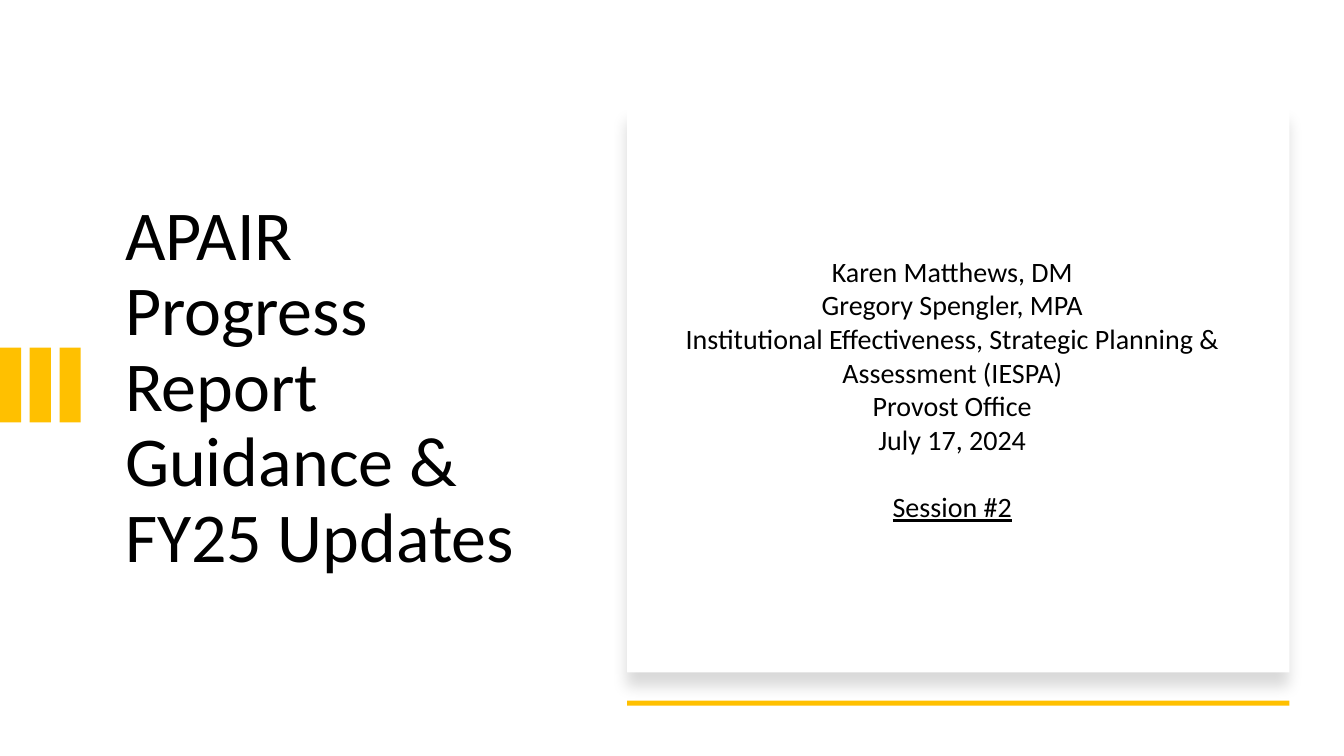
from dataclasses import dataclass

from lxml import etree
from pptx import Presentation
from pptx.dml.color import RGBColor
from pptx.enum.shapes import MSO_SHAPE
from pptx.enum.text import MSO_ANCHOR, PP_ALIGN
from pptx.oxml.ns import qn
from pptx.util import Inches, Pt

RECT = MSO_SHAPE.RECTANGLE
MIDDLE = MSO_ANCHOR.MIDDLE
LEFT, CENTER = PP_ALIGN.LEFT, PP_ALIGN.CENTER
TITLE_ONLY = 5


@dataclass(frozen=True)
class Theme:
    font: str = "Calibri"
    ink: str = "000000"
    paper: str = "FFFFFF"
    gold: str = "FFC000"
    title: int = 50
    body: int = 20


THEME = Theme()
TITLE = "APAIR Progress Report Guidance & FY25 Updates"
CREDITS = [
    "Karen Matthews, DM",
    "Gregory Spengler, MPA",
    "Institutional Effectiveness, Strategic Planning & Assessment (IESPA)",
    "Provost Office",
    "July 17, 2024",
]
SESSION = "Session #2"


def place(shape, left, top, width, height):
    shape.left, shape.top = Inches(left), Inches(top)
    shape.width, shape.height = Inches(width), Inches(height)


def frame_of(shape):
    frame = shape.text_frame
    frame.word_wrap = True
    frame.vertical_anchor = MIDDLE
    return frame


def write(para, text, size, align=LEFT, spacing=1.0, before=0, underline=False):
    para.alignment = align
    para.line_spacing = spacing
    para.space_before = Pt(before)
    run = para.add_run()
    run.text = text
    font = run.font
    font.name, font.size = THEME.font, Pt(size)
    font.color.rgb = RGBColor.from_string(THEME.ink)
    font.underline = underline


def add_rect(shapes, left, top, width, height, color):
    box = shapes.add_shape(RECT, Inches(left), Inches(top), Inches(width), Inches(height))
    box.shadow.inherit = False
    box.fill.solid()
    box.fill.fore_color.rgb = RGBColor.from_string(color)
    box.line.fill.background()
    return box


def add_shadow(shape, alpha, blur, dist, angle):
    effects = shape.element.spPr.find(qn("a:effectLst"))
    outer = etree.SubElement(
        effects, qn("a:outerShdw"), blurRad=str(Pt(blur)), dist=str(Pt(dist)),
        dir=str(angle * 60000), algn="t", rotWithShape="0")
    color = etree.SubElement(outer, qn("a:srgbClr"), val=THEME.ink)
    etree.SubElement(color, qn("a:alpha"), val=str(alpha * 1000))


def add_title(slide):
    title = slide.shapes.title
    place(title, 1.14, 1.5, 4.26, 4.71)
    write(frame_of(title).paragraphs[0], TITLE, THEME.title, spacing=0.9)


def add_bars(slide):
    group = slide.shapes.add_group_shape()
    for index in range(3):
        add_rect(group.shapes, index * 0.59 / 2, 3.45, 0.21, 0.74, THEME.gold)


def add_card(slide):
    card = add_rect(slide.shapes, 6.22, 1.07, 6.57, 5.6, THEME.paper)
    add_shadow(card, alpha=15, blur=11, dist=10, angle=90)
    add_rect(slide.shapes, 6.22, 6.95, 6.57, 0.05, THEME.gold)


def add_credits(slide):
    box = slide.shapes.add_textbox(Inches(6.33), Inches(1.5), Inches(6.23), Inches(4.71))
    frame = frame_of(box)
    for index, line in enumerate(CREDITS):
        para = frame.add_paragraph() if index else frame.paragraphs[0]
        write(para, line, THEME.body, align=CENTER)
    write(frame.add_paragraph(), SESSION, THEME.body, align=CENTER,
          before=24, underline=True)


def main():
    """Build the opening slide of the session."""
    deck = Presentation()
    deck.slide_width, deck.slide_height = Inches(13.33), Inches(7.5)
    slide = deck.slides.add_slide(deck.slide_layouts[TITLE_ONLY])
    add_title(slide)
    add_bars(slide)
    add_card(slide)
    add_credits(slide)
    deck.save("out.pptx")


if __name__ == "__main__":
    main()
